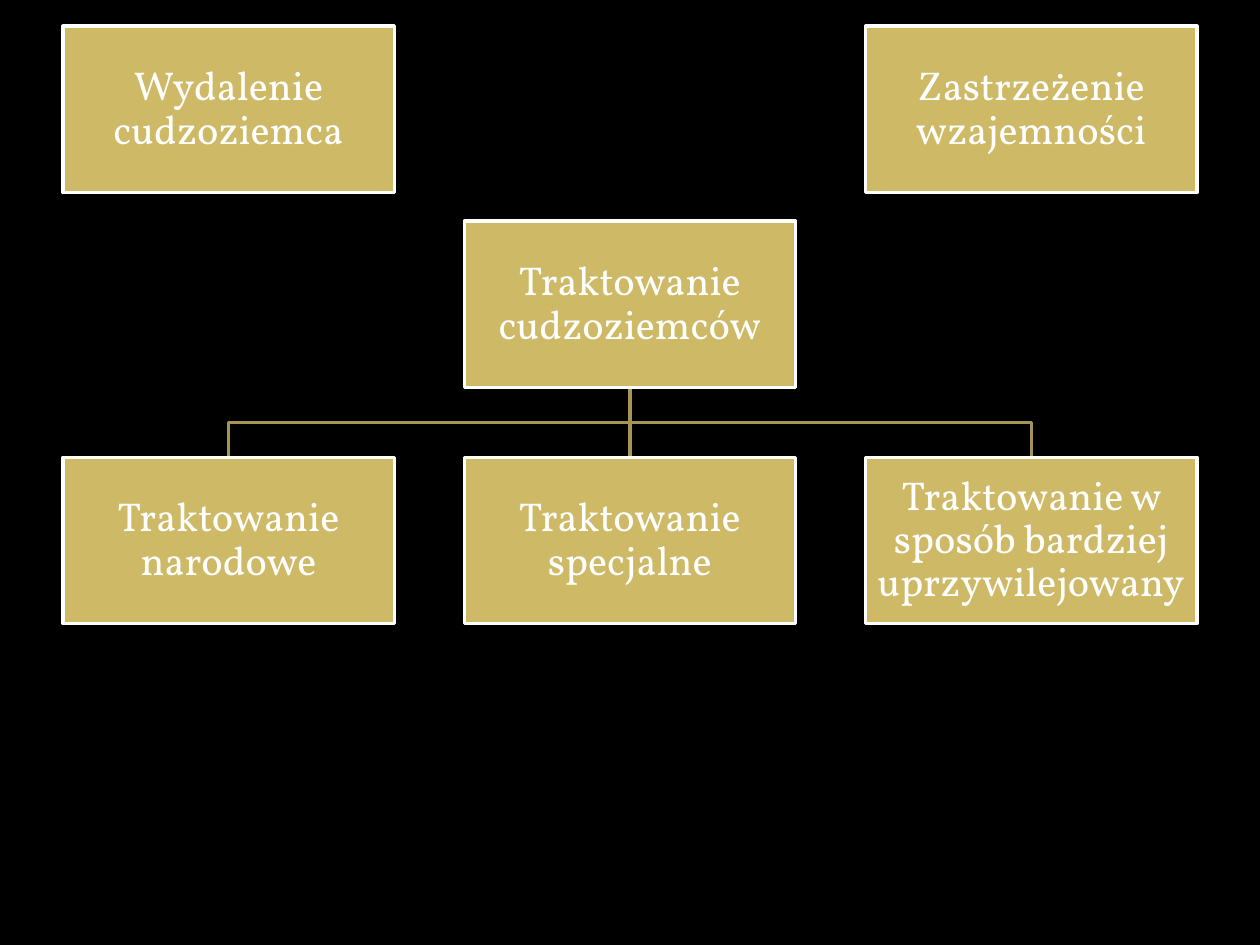
from lxml import etree
from pptx import Presentation
from pptx.dml.color import RGBColor
from pptx.enum.shapes import MSO_CONNECTOR, MSO_SHAPE
from pptx.enum.text import MSO_ANCHOR, PP_ALIGN
from pptx.oxml.ns import qn
from pptx.util import Cm, Pt

BLACK = RGBColor(0x00, 0x00, 0x00)
WHITE = RGBColor(0xFF, 0xFF, 0xFF)
GOLD = RGBColor(0xCE, 0xB9, 0x66)
DARK_GOLD = RGBColor(0xA5, 0x94, 0x52)

# Text, column, row
ROOT = ("Traktowanie cudzoziemców", 1, 1)
BRANCHES = [
    ("Traktowanie narodowe", 0, 2),
    ("Traktowanie specjalne", 1, 2),
    ("Traktowanie w sposób bardziej uprzywilejowany", 2, 2),
]
SEPARATE = [
    ("Wydalenie cudzoziemca", 0, 0),
    ("Zastrzeżenie wzajemności", 2, 0),
]

BOX_WIDTH, BOX_HEIGHT = Cm(6.68), Cm(3.35)
MARGIN, COLUMN_STEP = Cm(1.27), Cm(8.09)
ROW_TOPS = [Cm(0.53), Cm(4.46), Cm(9.22)]
INSET = Cm(0.05)


def column_left(column):
    return MARGIN + column * COLUMN_STEP


def column_center(column):
    return column_left(column) + BOX_WIDTH // 2


def style_line(line, color):
    line.color.rgb = color
    line.width = Pt(2)


def add_branch_line(slide, column):
    """Join the root box to the box below it in the given column."""
    start_x, end_x = column_center(ROOT[1]), column_center(column)
    start_y, end_y = ROW_TOPS[1] + BOX_HEIGHT, ROW_TOPS[2]
    if start_x == end_x:
        branch = slide.shapes.add_connector(
            MSO_CONNECTOR.STRAIGHT, start_x, start_y, end_x, end_y)
        etree.SubElement(branch._element.spPr, qn("a:effectLst"))
    else:
        middle_y = (start_y + end_y) // 2
        outline = slide.shapes.build_freeform(start_x, start_y)
        outline.add_line_segments(
            [(start_x, middle_y), (end_x, middle_y), (end_x, end_y)], close=False)
        branch = outline.convert_to_shape()
        branch.fill.background()
        branch.shadow.inherit = False
    style_line(branch.line, DARK_GOLD)


def add_box(slide, text, column, row):
    box = slide.shapes.add_shape(
        MSO_SHAPE.RECTANGLE, column_left(column), ROW_TOPS[row], BOX_WIDTH, BOX_HEIGHT)
    box.shadow.inherit = False
    box.fill.solid()
    box.fill.fore_color.rgb = GOLD
    style_line(box.line, WHITE)

    frame = box.text_frame
    frame.word_wrap = True
    frame.vertical_anchor = MSO_ANCHOR.MIDDLE
    frame.margin_left = frame.margin_right = INSET
    frame.margin_top = frame.margin_bottom = INSET

    label = frame.paragraphs[0]
    label.text = text
    label.alignment = PP_ALIGN.CENTER
    label.line_spacing = 0.9
    label.font.name = "Vollkorn"
    label.font.size = Pt(23)
    label.font.color.rgb = WHITE


def main():
    prs = Presentation()
    prs.slide_width, prs.slide_height = Cm(25.4), Cm(19.05)
    slide = prs.slides.add_slide(prs.slide_layouts[6])
    slide.background.fill.solid()
    slide.background.fill.fore_color.rgb = BLACK

    for _, column, _ in BRANCHES:
        add_branch_line(slide, column)
    for text, column, row in [ROOT, *BRANCHES, *SEPARATE]:
        add_box(slide, text, column, row)

    prs.save("out.pptx")


if __name__ == "__main__":
    main()
